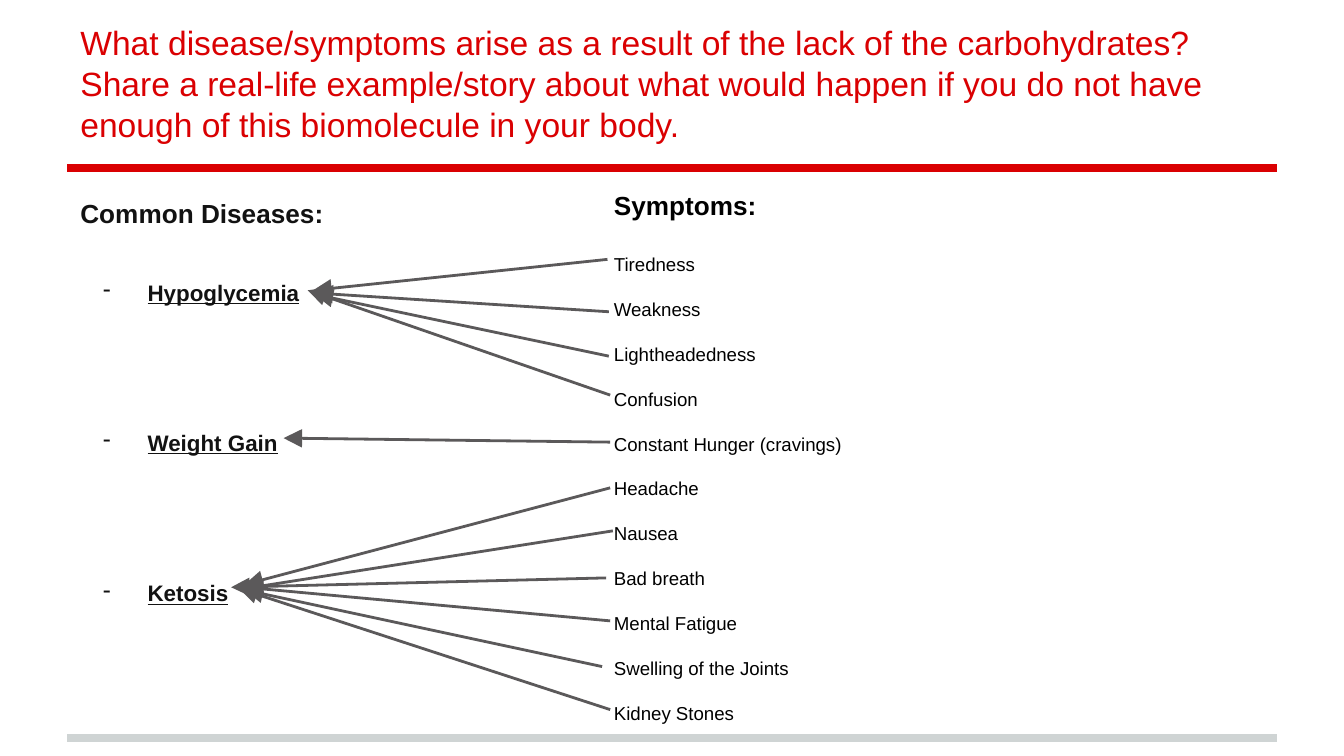
from pptx import Presentation
from pptx.util import Inches, Pt
from pptx.dml.color import RGBColor
from pptx.enum.shapes import MSO_CONNECTOR
from pptx.enum.text import MSO_ANCHOR
from pptx.oxml.ns import qn
from lxml.etree import SubElement

# Content
QUESTION = ("What disease/symptoms arise as a result of the lack of the carbohydrates? "
            "Share a real-life example/story about what would happen if you do not have "
            "enough of this biomolecule in your body.")
DISEASES_HEADING = "Common Diseases:"
SYMPTOMS_HEADING = "Symptoms:"

# Disease -> (symptom, arrow start, arrow tip)
DISEASES = {
    "Hypoglycemia": [
        ("Tiredness", (4.52, 1.93), (2.33, 2.16)),
        ("Weakness", (4.53, 2.32), (2.34, 2.18)),
        ("Lightheadedness", (4.53, 2.65), (2.34, 2.19)),
        ("Confusion", (4.54, 2.94), (2.29, 2.16)),
    ],
    "Weight Gain": [
        ("Constant Hunger (cravings)", (4.54, 3.29), (2.11, 3.26)),
    ],
    "Ketosis": [
        ("Headache", (4.54, 3.63), (1.82, 4.35)),
        ("Nausea", (4.56, 3.95), (1.82, 4.38)),
        ("Bad breath", (4.51, 4.3), (1.72, 4.37)),
        ("Mental Fatigue", (4.54, 4.62), (1.82, 4.37)),
        ("Swelling of the Joints", (4.48, 4.96), (1.82, 4.39)),
        ("Kidney Stones", (4.54, 5.28), (1.78, 4.38)),
    ],
}
SYMPTOMS = [link for links in DISEASES.values() for link in links]

# Formats
COLORS = {"red": "DA0002", "gray": "CFD4D4", "ink": "121212",
          "black": "000000", "arrow": "5B595A"}
FORMATS = {
    "question": {"font": {"size": Pt(18)}, "color": "red",
                 "paragraph": {"line_spacing": Pt(21.7)}},
    "diseases_heading": {"font": {"size": Pt(14), "bold": True}, "color": "ink",
                         "paragraph": {"line_spacing": Pt(21), "space_after": Pt(23.3)}},
    "disease": {"font": {"size": Pt(12), "bold": True, "underline": True}, "color": "ink",
                "paragraph": {"line_spacing": 1.25, "space_after": Pt(62.5)}},
    "symptoms_heading": {"font": {"size": Pt(14), "bold": True}, "color": "black",
                         "paragraph": {"line_spacing": Pt(17), "space_after": Pt(17)}},
    "symptom": {"font": {"size": Pt(10), "bold": False}, "color": "black",
                "paragraph": {"line_spacing": Pt(12), "space_after": Pt(12.05)}},
}


def add_line(slide, start, end, color, width, arrow=False):
    line = slide.shapes.add_connector(
        MSO_CONNECTOR.STRAIGHT, *(Inches(value) for value in (*start, *end)))
    line.line.color.rgb = RGBColor.from_string(COLORS[color])
    line.line.width = Pt(width)
    properties = line._element.spPr
    if arrow:
        SubElement(properties.find(qn("a:ln")), qn("a:tailEnd"),
                   type="triangle", w="lg", len="lg")
    SubElement(properties, qn("a:effectLst"))


def add_dash(paragraph):
    properties = paragraph._p.get_or_add_pPr()
    properties.set("marL", str(Inches(0.5)))
    properties.set("indent", str(Inches(-0.33)))
    SubElement(properties, qn("a:buChar"), char="-")


def add_text(slide, box, entries, anchor=MSO_ANCHOR.TOP):
    frame = slide.shapes.add_textbox(*(Inches(value) for value in box)).text_frame
    frame.word_wrap = True
    frame.vertical_anchor = anchor
    for side in ("left", "top", "right", "bottom"):
        setattr(frame, f"margin_{side}", Inches(0.1))
    for index, (text, role) in enumerate(entries):
        paragraph = frame.add_paragraph() if index else frame.paragraphs[0]
        run = paragraph.add_run()
        run.text = text
        style = FORMATS[role]
        for target, values in ((run.font, style["font"]), (paragraph, style["paragraph"])):
            for name, value in values.items():
                setattr(target, name, value)
        run.font.name = "Arial"
        run.font.color.rgb = RGBColor.from_string(COLORS[style["color"]])
        if role == "disease":
            add_dash(paragraph)


def main():
    deck = Presentation()
    deck.slide_width = Inches(10)
    deck.slide_height = deck.slide_width * 9 // 16
    slide = deck.slides.add_slide(deck.slide_layouts[6])

    # Rules under the question and at the foot
    for y, color in ((5.49, "gray"), (1.25, "red")):
        add_line(slide, (0.5, y), (9.5, y), color, 4)

    # Question and the two columns
    add_text(slide, (0.5, 0.23, 9, 0.94), [(QUESTION, "question")], MSO_ANCHOR.BOTTOM)
    add_text(slide, (0.5, 1.31, 9, 4.07),
             [(DISEASES_HEADING, "diseases_heading")]
             + [(disease, "disease") for disease in DISEASES])
    add_text(slide, (4.47, 1.31, 4.73, 3.63),
             [(SYMPTOMS_HEADING, "symptoms_heading")]
             + [(symptom, "symptom") for symptom, _, _ in SYMPTOMS])

    # Arrows from each symptom to its disease
    for _, start, tip in SYMPTOMS:
        add_line(slide, start, tip, "arrow", 1.5, arrow=True)

    deck.save("out.pptx")


if __name__ == "__main__":
    main()
